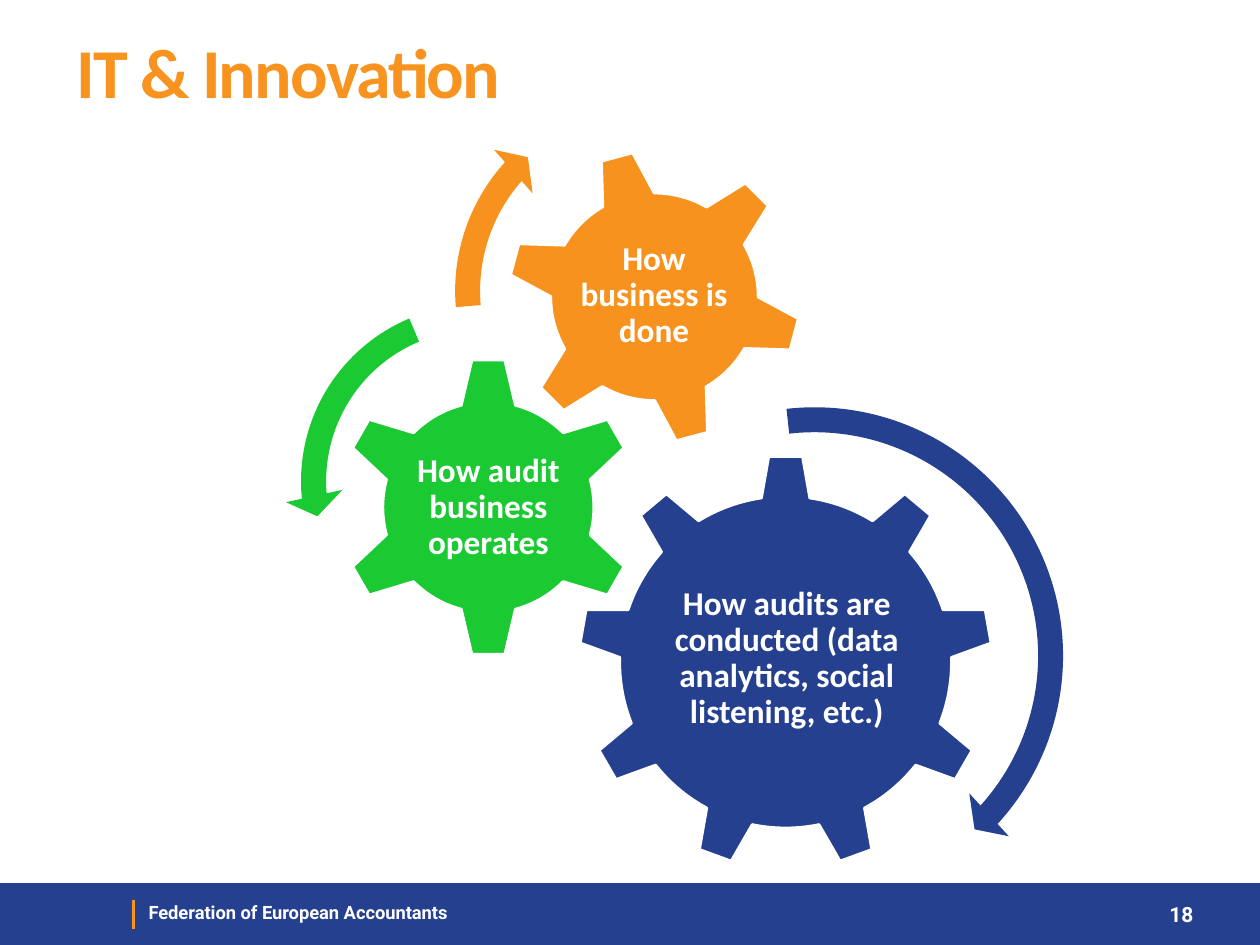
from pptx import Presentation
from pptx.dml.color import RGBColor
from pptx.enum.shapes import MSO_CONNECTOR, MSO_SHAPE
from pptx.enum.text import MSO_ANCHOR, PP_ALIGN
from pptx.oxml.ns import qn
from pptx.util import Pt
from lxml import etree

BLUE, GREEN, ORANGE, WHITE = "24408F", "1BC933", "F7921E", "FFFFFF"
RULE = "F7931E"


def rgb(value):
    return RGBColor.from_string(value)


def add_text(text, box, size, font="Calibri", color=WHITE, align=PP_ALIGN.LEFT,
             anchor=MSO_ANCHOR.MIDDLE, inset=None, line_spacing=None, spacing=None):
    tf = s.shapes.add_textbox(*map(Pt, box)).text_frame
    tf.word_wrap = True
    tf.vertical_anchor = anchor
    if inset is not None:
        tf.margin_left = tf.margin_right = tf.margin_top = tf.margin_bottom = Pt(inset)
    p = tf.paragraphs[0]
    p.alignment = align
    p.line_spacing = line_spacing
    r = p.add_run()
    r.text = text
    r.font.name = font
    r.font.size = Pt(size)
    r.font.bold = True
    r.font.color.rgb = rgb(color)
    if spacing is not None:
        r.font._element.set("spc", str(spacing))


prs = Presentation()
prs.slide_width, prs.slide_height = Pt(720), Pt(540)
s = prs.slides.add_slide(prs.slide_layouts[6])

gears = [
    (MSO_SHAPE.GEAR_9, 330.5, 259.9, 236.9, 0, BLUE,
     "How audits are conducted (data analytics, social listening, etc.)",
     (378.7, 315.4, 141.8, 121.7)),
    (MSO_SHAPE.GEAR_6, 193, 203.8, 172.1, 0, GREEN,
     "How audit business operates", (236.2, 247.7, 85.7, 85)),
    (MSO_SHAPE.GEAR_6, 289.4, 85, 169.2, 345, ORANGE,
     "How business is done", (326.2, 121.7, 95, 95)),
]
arrows = [
    (MSO_SHAPE.CIRCULAR_ARROW, 313.9, 223.2, 303.1, BLUE,
     (0.047, 2.99, 25.401, 158.107, 0.055)),
    (MSO_SHAPE.LEFT_CIRCULAR_ARROW, 162.7, 164.9, 220.3, GREEN,
     (0.065, 4.3, 104.891, 148.378, 0.075)),
    (MSO_SHAPE.CIRCULAR_ARROW, 250.6, 47.5, 237.6, ORANGE,
     (0.06, 3.941, 133.138, 105.082, 0.07)),
]

sp = s.shapes.add_shape(MSO_SHAPE.RECTANGLE, 0, Pt(504.7), Pt(720), Pt(35.3))
sp.shadow.inherit = False
sp.fill.solid()
sp.fill.fore_color.rgb = rgb(BLUE)
sp.line.fill.background()

add_text("Federation of European Accountants", (77.8, 511.2, 266.4, 20.9), 10.5,
         font="Roboto", anchor=MSO_ANCHOR.TOP)

rule = s.shapes.add_connector(MSO_CONNECTOR.STRAIGHT, Pt(76.3), Pt(514.1), Pt(76.3), Pt(530.6))
rule.line.color.rgb = rgb(RULE)
rule.line.width = Pt(1.5)
etree.SubElement(rule._element.spPr, qn("a:effectLst"))

add_text("IT & Innovation", (36.7, 1.4, 648, 77.8), 40, color=RULE, spacing=-100)

for kind, x, y, size, rotation, color, label, box in gears:
    sp = s.shapes.add_shape(kind, Pt(x), Pt(y), Pt(size), Pt(size))
    sp.shadow.inherit = False
    sp.rotation = rotation
    sp.fill.solid()
    sp.fill.fore_color.rgb = rgb(color)
    sp.line.color.rgb = rgb(WHITE)
    sp.line.width = Pt(1.5)
    add_text(label, box, 19, align=PP_ALIGN.CENTER, inset=2, line_spacing=0.9)

for kind, x, y, size, color, adjustments in arrows:
    sp = s.shapes.add_shape(kind, Pt(x), Pt(y), Pt(size), Pt(size))
    sp.shadow.inherit = False
    sp.fill.solid()
    sp.fill.fore_color.rgb = rgb(color)
    sp.line.fill.background()
    for i, value in enumerate(adjustments):
        sp.adjustments[i] = value

add_text("18", (643.7, 504.7, 45.4, 35.3), 12, font="Roboto", align=PP_ALIGN.RIGHT)

prs.save("out.pptx")
